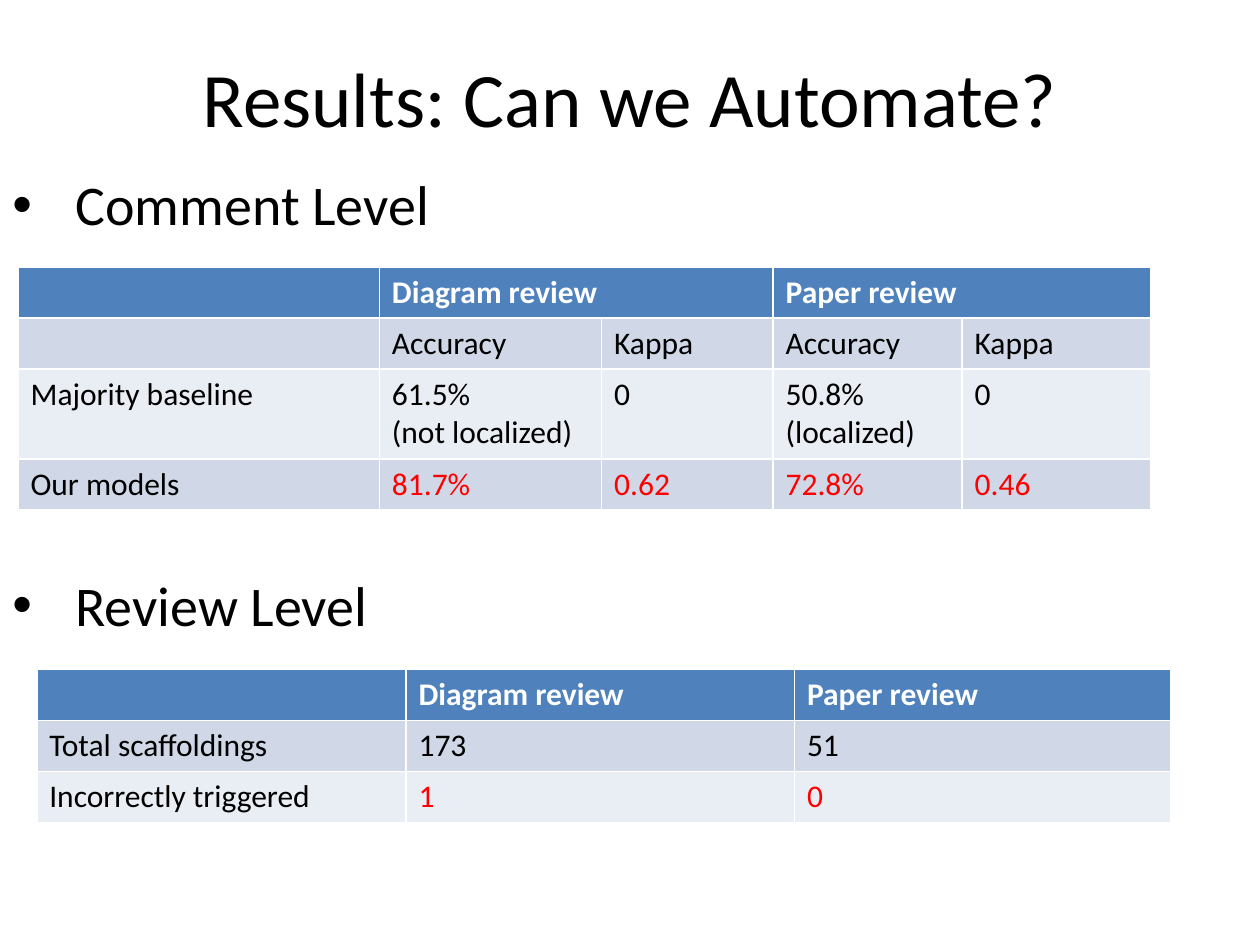
from dataclasses import dataclass

from lxml.etree import SubElement
from pptx import Presentation
from pptx.dml.color import RGBColor
from pptx.enum.text import MSO_ANCHOR, PP_ALIGN
from pptx.oxml.ns import qn
from pptx.util import Pt


@dataclass(frozen=True)
class Theme:
    font: str = "Calibri"
    title_size: int = 44
    level_size: int = 32
    table_size: int = 18
    text: str = "000000"
    header_text: str = "FFFFFF"
    highlight: str = "FF0000"
    header_fill: str = "4F81BD"
    band_fills: tuple = ("D0D8E8", "E9EDF4")


THEME = Theme()
ROW_HEIGHT = 29.2


def format_runs(paragraph, size, color=THEME.text, bold=False):
    for run in paragraph.runs:
        run.font.name = THEME.font
        run.font.size = Pt(size)
        run.font.bold = bold
        run.font.color.rgb = RGBColor.from_string(color)


def add_results(slide, left, top, widths, rows):
    """Add a banded table whose last row, after its label, is highlighted."""
    table = slide.shapes.add_table(
        len(rows), len(widths), Pt(left), Pt(top),
        Pt(sum(widths)), Pt(ROW_HEIGHT * len(rows))).table
    for column, width in zip(table.columns, widths):
        column.width = Pt(width)
    for r, values in enumerate(rows):
        table.rows[r].height = Pt(ROW_HEIGHT)
        fill = THEME.band_fills[(r - 1) % 2] if r else THEME.header_fill
        for c, value in enumerate(values):
            cell = table.cell(r, c)
            cell.text_frame.text = value
            cell.fill.solid()
            cell.fill.fore_color.rgb = RGBColor.from_string(fill)
            if r == 0:
                color = THEME.header_text
            elif r == len(rows) - 1 and c > 0:
                color = THEME.highlight
            else:
                color = THEME.text
            for paragraph in cell.text_frame.paragraphs:
                format_runs(paragraph, THEME.table_size, color, bold=r == 0)
    return table


prs = Presentation()
prs.slide_width, prs.slide_height = Pt(720), Pt(540)
slide = prs.slides.add_slide(prs.slide_layouts[6])

title = slide.shapes.add_textbox(Pt(36), Pt(10), Pt(648), Pt(90)).text_frame
title.word_wrap = True
title.vertical_anchor = MSO_ANCHOR.MIDDLE
title.text = "Results: Can we Automate?"
title.paragraphs[0].alignment = PP_ALIGN.CENTER
format_runs(title.paragraphs[0], THEME.title_size)

comment_table = add_results(
    slide, 10.3, 152.6, [206.5, 127, 98, 108, 108],
    [["", "Diagram review", "", "Paper review", ""],
     ["", "Accuracy", "Kappa", "Accuracy", "Kappa"],
     ["Majority baseline", "61.5%\n(not localized)", "0", "50.8% (localized)", "0"],
     ["Our models", "81.7%", "0.62", "72.8%", "0.46"]])
comment_table.rows[2].height = Pt(51.2)
for first in (1, 3):
    comment_table.cell(0, first).merge(comment_table.cell(0, first + 1))

levels = slide.shapes.add_textbox(Pt(0), Pt(93.6), Pt(712), Pt(312.5)).text_frame
levels.word_wrap = True
levels.text = "Comment Level\nReview Level"
for level in levels.paragraphs:
    format_runs(level, THEME.level_size)
    properties = level._p.get_or_add_pPr()
    properties.set("marL", str(Pt(36)))
    properties.set("indent", str(Pt(-36)))
    SubElement(properties, qn("a:buFont"), typeface="Arial")
    SubElement(properties, qn("a:buChar"), char="•")
levels.paragraphs[1].space_before = Pt(190.7)

add_results(
    slide, 21, 382.5, [211, 222, 215],
    [["", "Diagram review", "Paper review"],
     ["Total scaffoldings", "173", "51"],
     ["Incorrectly triggered", "1", "0"]])

prs.save("out.pptx")
